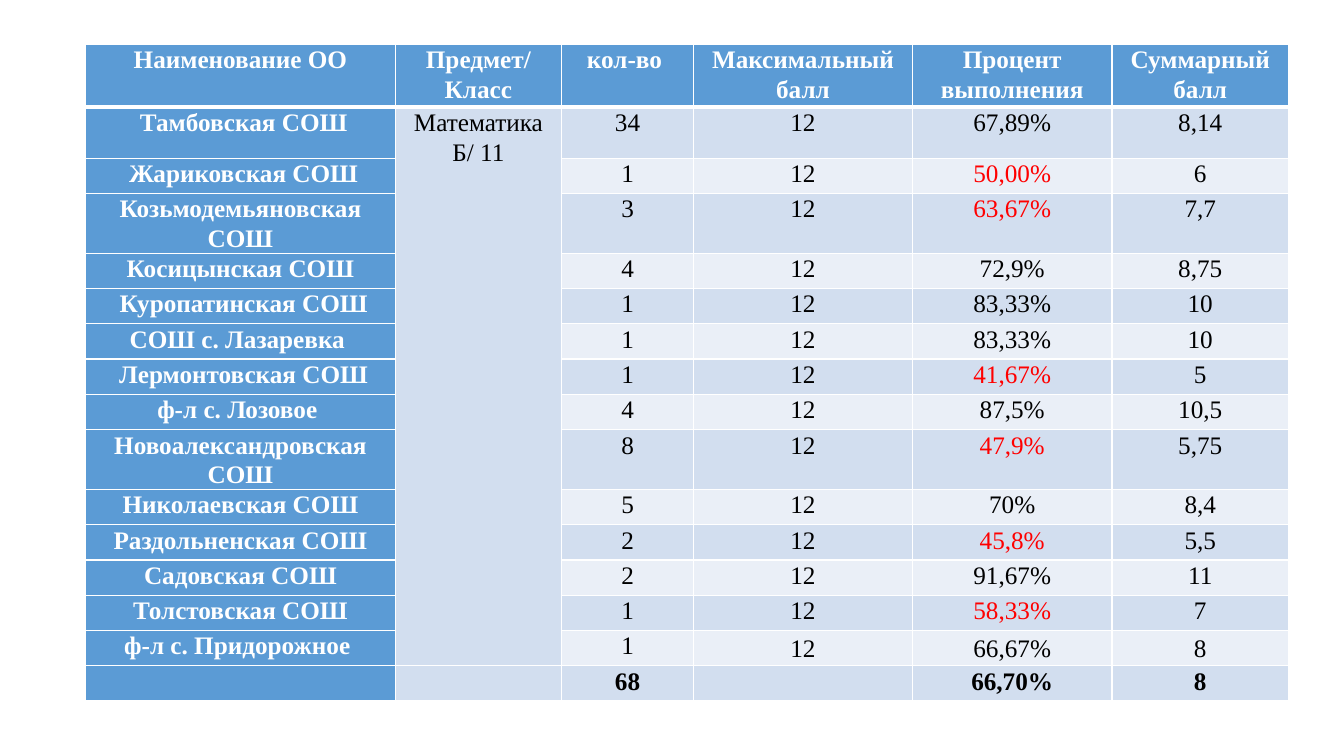
from lxml import etree
from pptx import Presentation
from pptx.dml.color import RGBColor
from pptx.enum.text import MSO_ANCHOR, PP_ALIGN
from pptx.oxml.ns import qn
from pptx.util import Inches, Pt

CENTER = PP_ALIGN.CENTER
TOP, MIDDLE = MSO_ANCHOR.TOP, MSO_ANCHOR.MIDDLE
FONT = "Times New Roman"
COLORS = {
    "header": "5B9BD5",
    "dark_band": "D2DEEF",
    "light_band": "EAEFF7",
    "white": "FFFFFF",
    "black": "000000",
    "low": "FF0000",
}
COLUMNS = [3.07, 1.65, 1.31, 2.17, 1.98, 1.75]
NAME, SUBJECT, COUNT, MAXIMUM, PERCENT, TOTAL = range(len(COLUMNS))
LINE_HEIGHT = 0.35
TALL_ROWS = {0: 0.62, 1: 0.51, 3: 0.54, 9: 0.54}
LOW_PERCENT = 65

HEADINGS = ["Наименование ОО", "Предмет/ Класс", "кол-во ", "Максимальный балл",
            "Процент выполнения", "Суммарный балл"]
SUBJECT_NAME = "Математика Б/ 11"
MAXIMUM_SCORE = "12"
SCHOOLS = [
    (" Тамбовская СОШ", "34", "67,89%", "8,14"),
    (" Жариковская СОШ", "1", "50,00%", "6"),
    ("Козьмодемьяновская СОШ", "3", "63,67%", "7,7"),
    ("Косицынская СОШ", "4", "72,9%", "8,75"),
    (" Куропатинская СОШ", "1", "83,33%", "10"),
    ("СОШ с. Лазаревка ", "1", "83,33%", "10"),
    (" Лермонтовская СОШ", "1", "41,67%", "5"),
    ("ф-л с. Лозовое ", "4", "87,5%", "10,5"),
    ("Новоалександровская СОШ", "8", "47,9%", "5,75"),
    ("Николаевская СОШ", "5", "70%", "8,4"),
    ("Раздольненская СОШ", "2", "45,8%", "5,5"),
    ("Садовская СОШ", "2", "91,67%", "11"),
    ("Толстовская СОШ", "1", "58,33%", "7"),
    ("ф-л с. Придорожное ", "1", "66,67%", "8"),
]
SUMMARY = ["", "", "68", "", "66,70%", "8"]


def table_rows():
    rows = [HEADINGS]
    for index, (name, count, percent, total) in enumerate(SCHOOLS):
        subject = "" if index else SUBJECT_NAME
        rows.append([name, subject, count, MAXIMUM_SCORE, percent, total])
    return rows + [SUMMARY]


def set_borders(cell, **widths):
    """Draw white borders; widths are points keyed by L, R, T and B."""
    properties = cell._tc.get_or_add_tcPr()
    for side, width in widths.items():
        line = etree.SubElement(properties, qn(f"a:ln{side}"), w=str(Pt(width)))
        fill = etree.SubElement(line, qn("a:solidFill"))
        etree.SubElement(fill, qn("a:srgbClr"), val=COLORS["white"])


def fill_color(row, column):
    if row == 0 or column == NAME:
        return COLORS["header"]
    return COLORS["dark_band" if row % 2 or column == SUBJECT else "light_band"]


def text_color(row, column, text):
    if row == 0 or column == NAME:
        return COLORS["white"]
    if column == PERCENT and float(text.rstrip("%").replace(",", ".")) < LOW_PERCENT:
        return COLORS["low"]
    return COLORS["black"]


def write_text(cell, text, color, bold):
    para = cell.text_frame.paragraphs[0]
    para.text = text
    para.alignment = CENTER
    para.line_spacing = 1.07
    para.font.size = Pt(18)
    for span in para.runs:
        span.font.name = FONT
        span.font.size = Pt(18)
        span.font.bold = bold
        span.font.color.rgb = RGBColor.from_string(color)


def style_cell(cell, row, column, text):
    last_school = len(SCHOOLS)
    cell.margin_left = cell.margin_right = Inches(0.07)
    cell.margin_top = cell.margin_bottom = 0
    cell.vertical_anchor = MIDDLE if row == last_school and column >= MAXIMUM else TOP
    set_borders(cell, L=1, R=1, T=3 if row == 1 else 1, B=3 if row == 0 else 1)
    cell.fill.solid()
    cell.fill.fore_color.rgb = RGBColor.from_string(fill_color(row, column))
    if text:
        bold = row in (0, last_school + 1) or column == NAME
        write_text(cell, text, text_color(row, column, text), bold)


def add_results_table(slide):
    rows = table_rows()
    heights = [TALL_ROWS.get(row, LINE_HEIGHT) for row in range(len(rows))]
    table = slide.shapes.add_table(
        len(rows), len(COLUMNS), Inches(0.85), Inches(0.44),
        Inches(sum(COLUMNS)), Inches(sum(heights))).table
    for column, width in zip(table.columns, COLUMNS):
        column.width = Inches(width)
    for row, height in zip(table.rows, heights):
        row.height = Inches(height)
    for row, texts in enumerate(rows):
        for column, text in enumerate(texts):
            style_cell(table.cell(row, column), row, column, text)
    table.cell(1, SUBJECT).merge(table.cell(len(SCHOOLS), SUBJECT))


def main():
    deck = Presentation()
    deck.slide_width, deck.slide_height = Inches(13.33), Inches(7.5)
    slide = deck.slides.add_slide(deck.slide_layouts[6])
    add_results_table(slide)
    deck.save("out.pptx")


if __name__ == "__main__":
    main()
